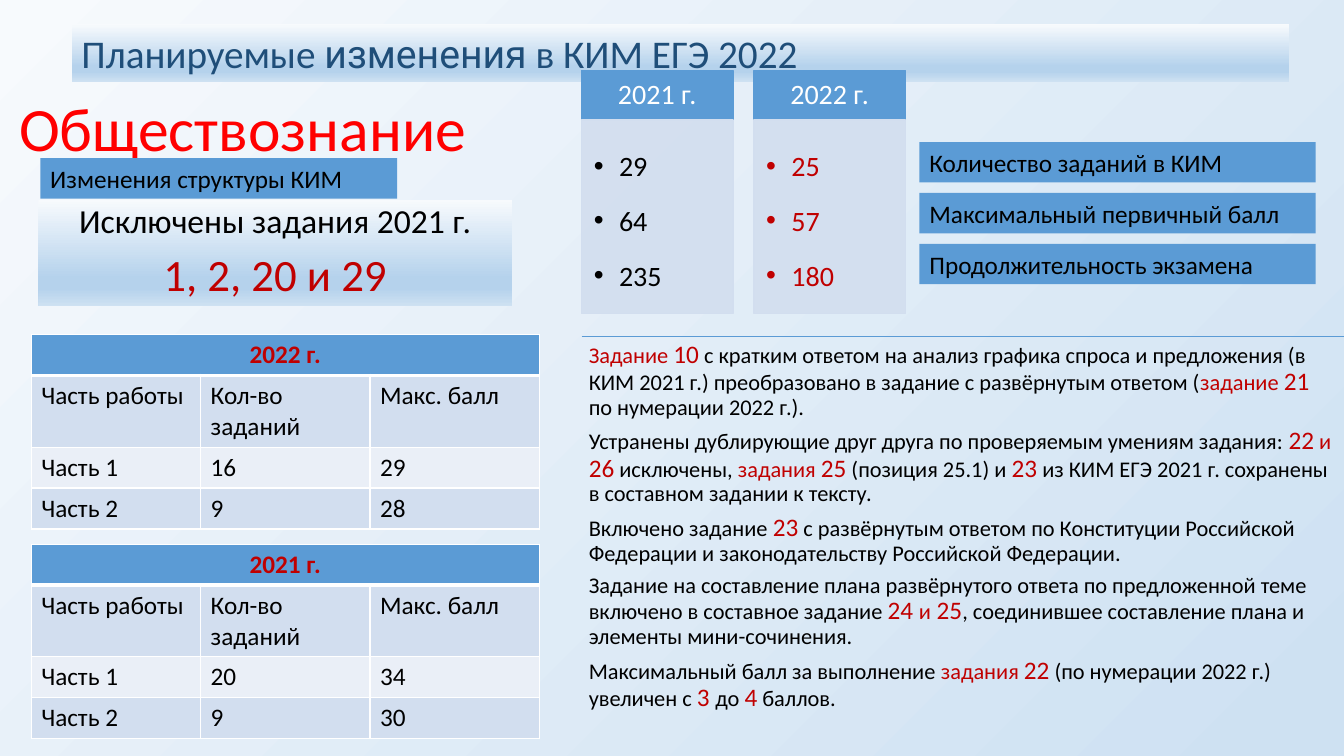
from copy import deepcopy

from lxml.etree import SubElement
from pptx import Presentation
from pptx.dml.color import RGBColor
from pptx.enum.shapes import MSO_CONNECTOR, MSO_SHAPE
from pptx.enum.text import MSO_ANCHOR, MSO_AUTO_SIZE, PP_ALIGN
from pptx.oxml.ns import qn
from pptx.util import Inches, Pt

BLUE = RGBColor(0x5B, 0x9B, 0xD5)
NAVY = RGBColor(0x1F, 0x4E, 0x79)
PALE = RGBColor(0xD2, 0xDE, 0xEF)
PALEST = RGBColor(0xEA, 0xEF, 0xF7)
ICE = RGBColor(0xF7, 0xFA, 0xFD)
SKY = RGBColor(0xB5, 0xD2, 0xEC)
MIST = RGBColor(0xCE, 0xE1, 0xF2)
RED = RGBColor(0xFF, 0, 0)
CRIMSON = RGBColor(0xC0, 0, 0)
BLACK = RGBColor(0, 0, 0)
WHITE = RGBColor(0xFF, 0xFF, 0xFF)

BANNER_STOPS = [(0, ICE), (0.74, SKY), (0.83, SKY), (1, MIST)]

# Run styles of the commentary: size and colour
PLAIN = (16, BLACK)
WORD = (16, CRIMSON)
NUMBER = (18, CRIMSON)

COMMENTS = [
    [("Задание ", WORD), ("10", NUMBER),
     (" с кратким ответом на анализ графика спроса и предложения (в КИМ 2021 г.) "
      "преобразовано в задание с развёрнутым ответом (", PLAIN),
     ("задание ", WORD), ("21", NUMBER), (" по нумерации 2022 г.).", PLAIN)],
    [("Устранены дублирующие друг друга по проверяемым умениям задания: ", PLAIN),
     ("22", NUMBER), (" и ", WORD), ("26", NUMBER), (" исключены, ", PLAIN),
     ("задания ", WORD), ("25", NUMBER), (" (позиция 25.1) и ", PLAIN), ("23", NUMBER),
     (" из КИМ ЕГЭ 2021 г. сохранены в составном задании к тексту.", PLAIN)],
    [("Включено задание ", PLAIN), ("23", NUMBER),
     (" с развёрнутым ответом по Конституции Российской Федерации "
      "и законодательству Российской Федерации.", PLAIN)],
    [("Задание на составление плана развёрнутого ответа по предложенной теме "
      "включено в составное задание ", PLAIN),
     ("24 ", NUMBER), ("и", WORD), (" 25", NUMBER),
     (", соединившее составление плана и элементы мини-сочинения.", PLAIN)],
    [("Максимальный балл за выполнение ", PLAIN), ("задания ", WORD), ("22", NUMBER),
     (" (по нумерации 2022 г.) увеличен с ", PLAIN), ("3 ", NUMBER), ("до ", PLAIN),
     ("4", NUMBER), (" баллов.", PLAIN)],
]


def format_run(run, size, color, font="Calibri", bold=False):
    run.font.name = font
    run.font.size = Pt(size)
    run.font.color.rgb = color
    run.font.bold = bold


def write_paragraph(paragraph, runs, align=PP_ALIGN.LEFT, line_spacing=1.0, space_after=0):
    """Fill a paragraph with (text, (size, colour[, font])) runs."""
    paragraph.alignment = align
    paragraph.line_spacing = line_spacing
    paragraph.space_after = Pt(space_after)
    for text, style in runs:
        run = paragraph.add_run()
        run.text = text
        format_run(run, *style)


def next_paragraph(text_frame, index):
    return text_frame.add_paragraph() if index else text_frame.paragraphs[0]


def set_frame(text_frame, anchor=MSO_ANCHOR.TOP, margins=(0.1, 0.05, 0.1, 0.05)):
    text_frame.word_wrap = True
    text_frame.auto_size = MSO_AUTO_SIZE.NONE
    text_frame.vertical_anchor = anchor
    (text_frame.margin_left, text_frame.margin_top,
     text_frame.margin_right, text_frame.margin_bottom) = map(Inches, margins)


def paint_gradient(fill, element, stops, angle):
    fill.gradient()
    fill.gradient_angle = angle
    stop_list = element.find(".//" + qn("a:gsLst"))
    for _ in stops[2:]:
        stop_list.append(deepcopy(stop_list[0]))
    for stop, (position, color) in zip(fill.gradient_stops, stops):
        stop.position = position
        stop.color.rgb = color


def add_box(slide, left, top, width, height, color=None, **frame):
    """Add a borderless rectangle, with the banner gradient when no colour is given."""
    shape = slide.shapes.add_shape(
        MSO_SHAPE.RECTANGLE, Inches(left), Inches(top), Inches(width), Inches(height))
    shape.shadow.inherit = False
    shape.line.fill.background()
    if color is None:
        paint_gradient(shape.fill, shape.element, BANNER_STOPS, 270)
    else:
        shape.fill.solid()
        shape.fill.fore_color.rgb = color
    set_frame(shape.text_frame, **frame)
    return shape


def add_label(slide, left, top, width, text):
    shape = add_box(slide, left, top, width, 0.4, BLUE)
    write_paragraph(shape.text_frame.paragraphs[0], [(text, (18, BLACK))])


def add_year_column(slide, left, year, values, color):
    header = add_box(slide, left, 0.7, 1.5, 0.49, BLUE,
                     anchor=MSO_ANCHOR.MIDDLE, margins=(0.16, 0.09, 0.16, 0.09))
    write_paragraph(header.text_frame.paragraphs[0], [(year, (20, WHITE))], PP_ALIGN.CENTER, 0.9)
    body = add_box(slide, left, 1.19, 1.5, 1.92, PALE, margins=(0.12, 0.12, 0.16, 0.17))
    body_color = body.element.spPr.find(qn("a:solidFill"))[0]
    SubElement(body_color, qn("a:alpha"), val="90000")
    for outlined, line_color in ((header, BLUE), (body, PALE)):
        outlined.line.color.rgb = line_color
        outlined.line.width = Pt(1)
    for index, value in enumerate(values):
        paragraph = next_paragraph(body.text_frame, index)
        write_paragraph(paragraph, [(value, (20, color))], line_spacing=1.5, space_after=3)
        properties = paragraph._p.get_or_add_pPr()
        properties.set("marL", str(Inches(0.25)))
        properties.set("indent", str(-Inches(0.25)))
        SubElement(properties, qn("a:buFont"), typeface="Arial")
        SubElement(properties, qn("a:buChar"), char="•")


def style_cell(cell, color, bottom_width=1):
    properties = cell._tc.get_or_add_tcPr()
    for side, width in (("L", 1), ("R", 1), ("T", 1), ("B", bottom_width)):
        border = SubElement(properties, qn("a:ln" + side), w=str(Pt(width)))
        border_fill = SubElement(border, qn("a:solidFill"))
        SubElement(border_fill, qn("a:srgbClr"), val=str(WHITE))
    cell.fill.solid()
    cell.fill.fore_color.rgb = color


def add_score_table(slide, top, year, first_part, second_part):
    rows = [(year, "", ""), ("Часть работы", "Кол-во заданий", "Макс. балл"),
            ("Часть 1", *first_part), ("Часть 2", *second_part)]
    table = slide.shapes.add_table(
        4, 3, Inches(0.31), Inches(top), Inches(5.04), Inches(1.9)).table
    for row, height in zip(table.rows, (0.4, 0.7, 0.4, 0.4)):
        row.height = Inches(height)
    for row_index, (values, color) in enumerate(zip(rows, (BLUE, PALE, PALEST, PALE))):
        for column_index, value in enumerate(values):
            cell = table.cell(row_index, column_index)
            style_cell(cell, color, 1 if row_index else 3)
            cell.text_frame.text = value
            for run in cell.text_frame.paragraphs[0].runs:
                is_header = row_index == 0
                format_run(run, 18, CRIMSON if is_header else BLACK, bold=is_header)
    table.cell(0, 0).merge(table.cell(0, 2))
    table.cell(0, 0).text_frame.paragraphs[0].alignment = PP_ALIGN.CENTER


def add_title(slide, text):
    title = slide.shapes.title
    title.left, title.top, title.width, title.height = map(Inches, (0.09, 0.91, 4.73, 0.79))
    set_frame(title.text_frame, MSO_ANCHOR.MIDDLE)
    write_paragraph(title.text_frame.paragraphs[0], [(text, (44, RED))], line_spacing=0.9)


def add_comments(slide):
    line = slide.shapes.add_connector(
        MSO_CONNECTOR.STRAIGHT, Inches(5.77), Inches(3.34), Inches(13.33), Inches(3.34))
    line.line.color.rgb = BLUE
    line.line.width = Pt(0.5)
    SubElement(line.element.spPr, qn("a:effectLst"))
    box = slide.shapes.add_textbox(Inches(5.77), Inches(3.32), Inches(7.56), Inches(3.98))
    set_frame(box.text_frame, margins=(0.07,) * 4)
    for index, runs in enumerate(COMMENTS):
        write_paragraph(next_paragraph(box.text_frame, index), runs,
                        line_spacing=0.9, space_after=5.6)


def main():
    presentation = Presentation()
    presentation.slide_width, presentation.slide_height = Inches(13.33), Inches(7.5)
    slide = presentation.slides.add_slide(presentation.slide_layouts[5])
    paint_gradient(slide.background.fill, slide.element, [(0, ICE), (0.97, MIST)], 315)

    # Title and banner
    add_title(slide, "Обществознание")
    banner = add_box(slide, 0.71, 0.24, 12.08, 0.57)
    write_paragraph(banner.text_frame.paragraphs[0], [
        ("Планируемые ", (28, NAVY)), ("изменения", (28, NAVY, "Roboto")),
        (" в КИМ ЕГЭ 2022", (28, NAVY))])

    # Comparison of the two years
    measures = ("Количество заданий в КИМ", "Максимальный первичный балл",
                "Продолжительность экзамена")
    for index, measure in enumerate(measures):
        add_label(slide, 9.12, 1.41 + 0.505 * index, 3.93, measure)
    add_year_column(slide, 5.77, "2021 г.", ("29", "64", "235"), BLACK)
    add_year_column(slide, 7.48, "2022 г.", ("25", "57", "180"), CRIMSON)

    # Excluded tasks
    add_label(slide, 0.4, 1.57, 3.54, "Изменения структуры КИМ")
    excluded = add_box(slide, 0.38, 1.98, 4.7, 1.06,
                       anchor=MSO_ANCHOR.MIDDLE, margins=(0.1,) * 4)
    lines = (("Исключены задания 2021 г.", (24, BLACK)), ("1, 2, 20 и 29", (32, CRIMSON)))
    for index, line in enumerate(lines):
        write_paragraph(next_paragraph(excluded.text_frame, index), [line],
                        PP_ALIGN.CENTER, 0.9, 8.4)

    # Commentary and score tables
    add_comments(slide)
    add_score_table(slide, 3.32, "2022 г.", ("16", "29"), ("9", "28"))
    add_score_table(slide, 5.4, "2021 г.", ("20", "34"), ("9", "30"))

    presentation.save("out.pptx")


if __name__ == "__main__":
    main()
